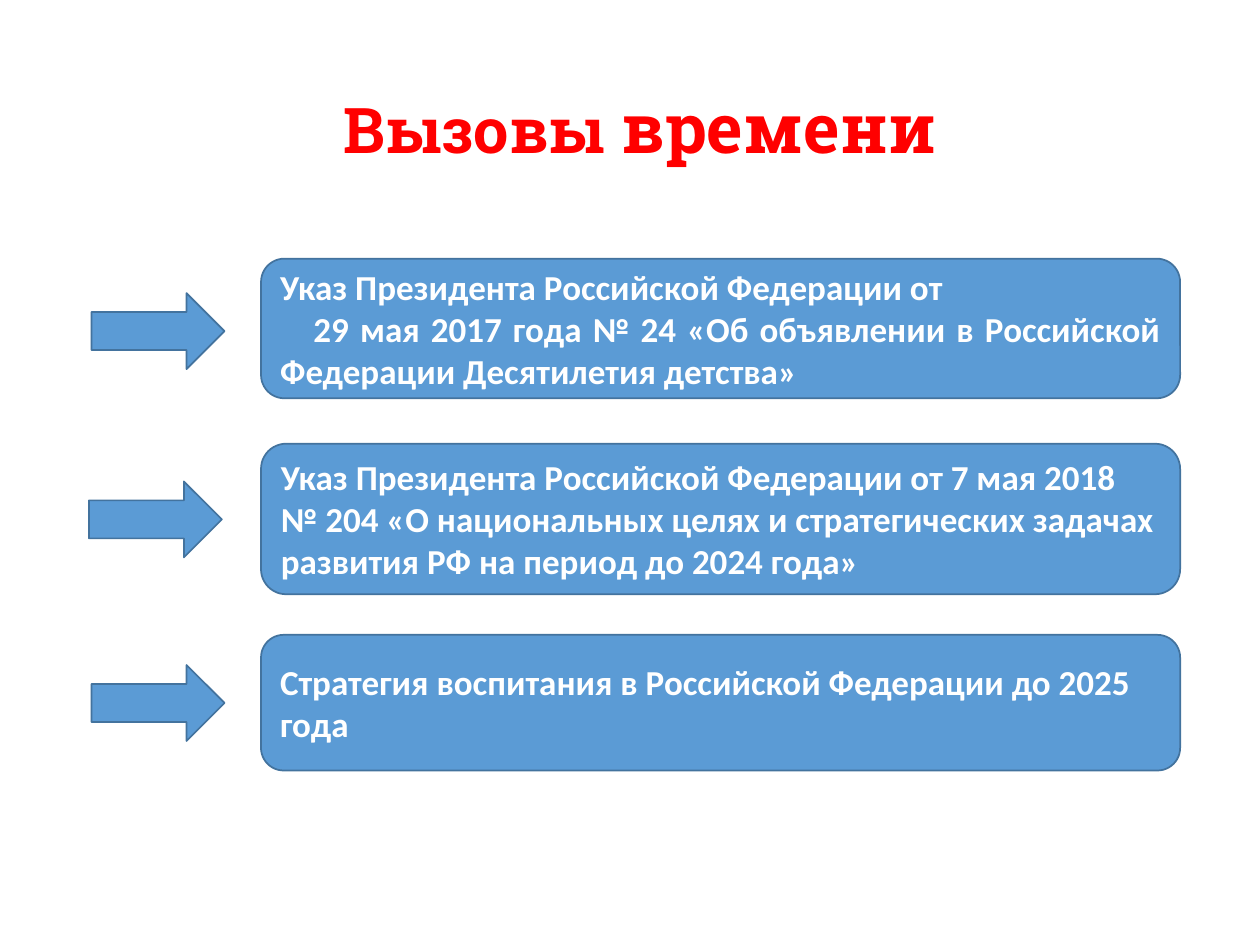
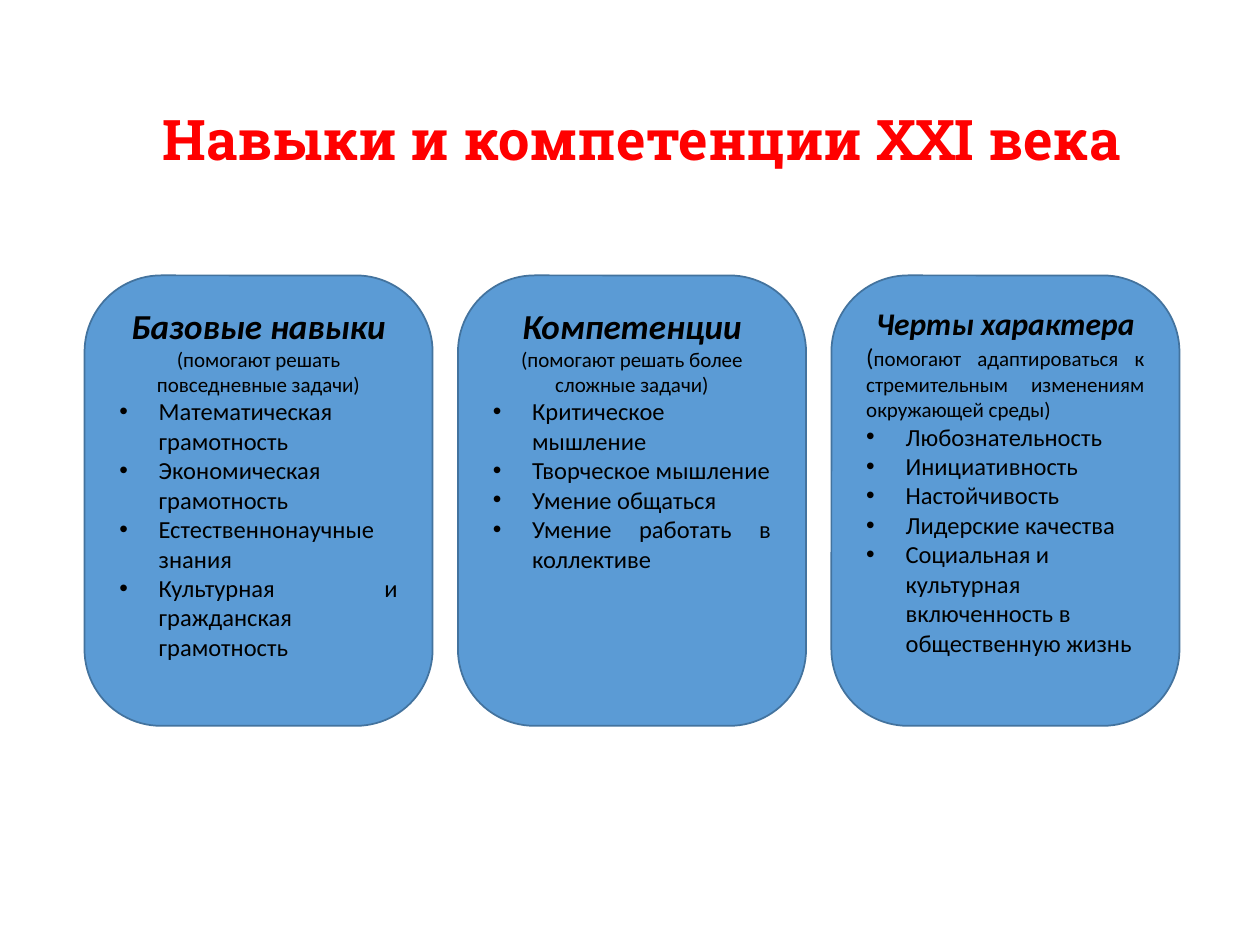
from lxml.etree import SubElement
from pptx import Presentation
from pptx.dml.color import RGBColor
from pptx.enum.shapes import MSO_SHAPE
from pptx.enum.text import MSO_ANCHOR, MSO_AUTO_SIZE, PP_ALIGN
from pptx.oxml.ns import qn
from pptx.util import Pt

# Theme: colours, fonts and type sizes
THEME = {
    "red": RGBColor(0xFF, 0x00, 0x00),
    "blue": RGBColor(0x5B, 0x9B, 0xD5),
    "edge": RGBColor(0x43, 0x73, 0x9E),
    "white": RGBColor(0xFF, 0xFF, 0xFF),
    "black": RGBColor(0x00, 0x00, 0x00),
    "head_font": "Roboto Slab",
    "body_font": "Calibri",
    "body": 20,
    "note": 12,
    "item": 14,
}
CENTER, JUSTIFY, LEFT = PP_ALIGN.CENTER, PP_ALIGN.JUSTIFY, PP_ALIGN.LEFT


def add_run(p, text, size, color, font=THEME["body_font"], **style):
    r = p.add_run()
    r.text = text
    r.font.color.rgb = color
    for name, value in {"name": font, "size": Pt(size), "bold": False, **style}.items():
        setattr(r.font, name, value)


def add_block(s, kind, x, y, w, h):
    sp = s.shapes.add_shape(kind, Pt(x), Pt(y), Pt(w), Pt(h))
    sp.shadow.inherit = False
    sp.fill.solid()
    sp.fill.fore_color.rgb = THEME["blue"]
    sp.line.color.rgb = THEME["edge"]
    sp.line.width = Pt(1)
    sp.text_frame.word_wrap = True
    return sp


prs = Presentation()
prs.slide_width, prs.slide_height = Pt(720), Pt(540)

# Both slides with their titles: position, then (text, size) runs
titles = [
    ((55.4, 22.3, 620.6, 105.1), [("Вызовы", 36), (" времени", 39.6)]),
    ((39.6, 47.5, 654.5, 67.7), [("Навыки и компетенции ХХI века", 32)]),
]
slides = []
for box, runs in titles:
    s = prs.slides.add_slide(prs.slide_layouts[5])
    title = s.shapes.title
    for name, value in zip(("left", "top", "width", "height"), box):
        setattr(title, name, Pt(value))
    tf = title.text_frame
    for name, value in {"auto_size": MSO_AUTO_SIZE.NONE, "word_wrap": True,
                        "vertical_anchor": MSO_ANCHOR.MIDDLE}.items():
        setattr(tf, name, value)
    p = tf.paragraphs[0]
    p.alignment, p.line_spacing = CENTER, 0.9
    for text, size in runs:
        add_run(p, text, size, THEME["red"], THEME["head_font"], bold=True)
    slides.append(s)
challenges, skills = slides

# Slide 1: arrows pointing at the documents
# box top, box height, arrow left, arrow top, alignment, paragraphs
documents = [
    (147.8, 79.8, 52.3, 167.5, JUSTIFY,
     ["Указ Президента Российской Федерации от",
      "29 мая 2017 года № 24 «Об объявлении в Российской Федерации Десятилетия детства»"]),
    (253.6, 86, 50.8, 275.1, LEFT,
     ["Указ Президента Российской Федерации от 7 мая 2018 № 204 «О национальных "
      "целях и стратегических задачах развития РФ на период до 2024 года»"]),
    (362.8, 77.5, 52.3, 380, LEFT,
     ["Стратегия воспитания в Российской Федерации до 2025 года"]),
]
for top, height, arrow_left, arrow_top, align, lines in documents:
    add_block(challenges, MSO_SHAPE.RIGHT_ARROW, arrow_left, arrow_top, 76, 43.4)
    sp = add_block(challenges, MSO_SHAPE.ROUNDED_RECTANGLE, 149.2, top, 525.2, height)
    tf = sp.text_frame
    tf.vertical_anchor = MSO_ANCHOR.MIDDLE
    for i, text in enumerate(lines):
        p = tf.add_paragraph() if i else tf.paragraphs[0]
        p.alignment = align
        if i:
            p._p.get_or_add_pPr().set("indent", str(Pt(19)))
        add_run(p, text, THEME["body"], THEME["white"], bold=True)

# Slide 2: three cards in a row
# heading, heading size, note alignment, note runs, item alignment, items
NOTE, ITEM = THEME["note"], THEME["item"]
cards = [
    ("Базовые навыки", 20, CENTER, [("(помогают решать повседневные задачи)", NOTE)], JUSTIFY,
     ["Математическая грамотность", "Экономическая грамотность",
      "Естественнонаучные знания", "Культурная и гражданская грамотность"]),
    ("Компетенции", 20, CENTER, [("(помогают решать более сложные задачи)", NOTE)], JUSTIFY,
     ["Критическое мышление", "Творческое мышление", "Умение общаться",
      "Умение работать в коллективе"]),
    ("Черты характера", 18, JUSTIFY,
     [("(", ITEM),
      ("помогают адаптироваться к стремительным изменениям окружающей среды)", NOTE)], LEFT,
     ["Любознательность", "Инициативность", "Настойчивость", "Лидерские качества",
      "Социальная и культурная включенность в общественную жизнь"]),
]
for col, (heading, size, note_align, note, item_align, items) in enumerate(cards):
    sp = add_block(skills, MSO_SHAPE.ROUNDED_RECTANGLE, 48.3 + 213.4 * col, 157.4, 198.9, 257.4)
    sp.adjustments[0] = 0.22
    tf = sp.text_frame
    tf.vertical_anchor = MSO_ANCHOR.TOP
    p = tf.paragraphs[0]
    p.alignment = CENTER
    add_run(p, heading, size, THEME["black"], bold=True, italic=True)
    p = tf.add_paragraph()
    p.alignment = note_align
    for text, note_size in note:
        add_run(p, text, note_size, THEME["black"])
    for text in items:
        p = tf.add_paragraph()
        pPr = p._p.get_or_add_pPr()
        pPr.set("marL", str(Pt(22.5)))
        pPr.set("indent", str(Pt(-22.5)))
        SubElement(pPr, qn("a:buFont"), typeface="Arial")
        SubElement(pPr, qn("a:buChar"), char="•")
        p.alignment = item_align
        add_run(p, text, ITEM, THEME["black"])

prs.save("out.pptx")
